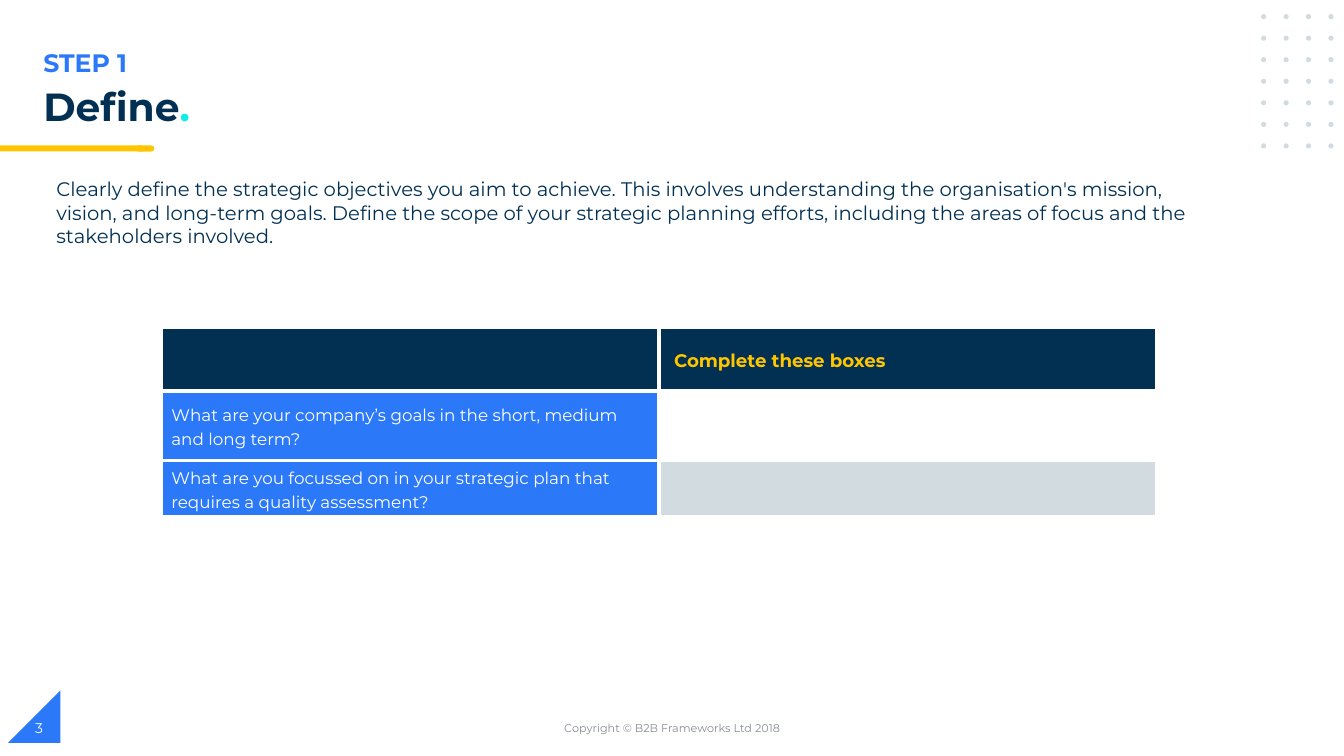
from dataclasses import dataclass
from lxml.etree import fromstring
from pptx import Presentation
from pptx.dml.color import RGBColor
from pptx.enum.shapes import MSO_SHAPE
from pptx.enum.text import MSO_ANCHOR, PP_ALIGN
from pptx.oxml.ns import nsdecls
from pptx.util import Inches, Pt


@dataclass(frozen=True)
class Theme:
    font: str = "Montserrat"
    navy: str = "023053"
    blue: str = "2B79F8"
    yellow: str = "FFC600"
    cyan: str = "0EECEC"
    pale: str = "D1DBE0"
    grey: str = "888C97"
    white: str = "FFFFFF"
    title: int = 28
    step: int = 18
    body: int = 14
    header: int = 13
    question: int = 12
    number: int = 10
    footer: int = 8


theme = Theme()
deck = Presentation()
deck.slide_width, deck.slide_height = Inches(13.33), Inches(7.5)
slide = deck.slides.add_slide(deck.slide_layouts[6])

# The slide is a grid of 100 columns and 100 rows
COLUMN = deck.slide_width / 100
ROW = deck.slide_height / 100


def place(left, top, width, height):
    return (int(left * COLUMN), int(top * ROW),
            int(width * COLUMN), int(height * ROW))


def write(frame, text, *, size, color, bold=False, align=PP_ALIGN.LEFT,
          spacing=1.0, anchor=MSO_ANCHOR.TOP):
    frame.word_wrap = True
    frame.vertical_anchor = anchor
    paragraph = frame.paragraphs[0]
    paragraph.alignment = align
    paragraph.line_spacing = spacing
    run = paragraph.add_run()
    run.text = text
    run.font.name = theme.font
    run.font.size = Pt(size)
    run.font.bold = bold
    run.font.color.rgb = RGBColor.from_string(color)


# Corner triangle, title underline and dot grid
decorations = [
    (MSO_SHAPE.RIGHT_TRIANGLE, (0.6, 91.33, 3.9, 6.93), theme.blue),
    (MSO_SHAPE.FLOWCHART_TERMINATOR, (10.05, 19.25, 1.43, 0.8), theme.yellow),
    (MSO_SHAPE.RECTANGLE, (0, 19.25, 10.58, 0.8), theme.yellow),
]
decorations += [
    (MSO_SHAPE.OVAL, (93.83 + 1.67 * column, 1.87 + 2.85 * row, 0.38, 0.67), theme.pale)
    for row in range(7) for column in range(4)
]
for outline, area, color in decorations:
    decoration = slide.shapes.add_shape(outline, *place(*area))
    decoration.shadow.inherit = False
    decoration.fill.solid()
    decoration.fill.fore_color.rgb = RGBColor.from_string(color)
    decoration.line.fill.background()
    if outline == MSO_SHAPE.RIGHT_TRIANGLE:
        decoration._element.spPr.xfrm.set("flipH", "1")

# Heading, introduction and footer
step = slide.shapes.add_textbox(*place(2.48, 5.6, 50.2, 5.33)).text_frame
write(step, "STEP 1", size=theme.step, color=theme.blue, bold=True)

title = slide.shapes.add_textbox(*place(2.48, 10.93, 58.2, 5.33)).text_frame
for text, color in (("Define", theme.navy), (".", theme.cyan)):
    write(title, text, size=theme.title, color=color, bold=True, spacing=0.9)

introduction = slide.shapes.add_textbox(*place(3.45, 22.8, 85.95, 10.8)).text_frame
write(introduction,
      "Clearly define the strategic objectives you aim to achieve. This involves "
      "understanding the organisation's mission, vision, and long-term goals. Define "
      "the scope of your strategic planning efforts, including the areas of focus and "
      "the stakeholders involved.",
      size=theme.body, color=theme.navy)

copyright_line = slide.shapes.add_textbox(*place(33.15, 93.6, 33.75, 5.33)).text_frame
write(copyright_line, "Copyright © B2B Frameworks Ltd 2018", size=theme.footer,
      color=theme.grey, align=PP_ALIGN.CENTER, anchor=MSO_ANCHOR.MIDDLE)

page_number = slide.shapes.add_textbox(*place(1.88, 93.6, 22.5, 5.33)).text_frame
write(page_number, "3", size=theme.number, color=theme.white, anchor=MSO_ANCHOR.MIDDLE)

# Question table: row height, then text and fill of each cell
rows = [
    (8.4, ("", theme.navy), ("Complete these boxes", theme.navy)),
    (9.2, ("What are your company’s goals in the short, medium and long term?", theme.blue),
     ("", theme.white)),
    (7.47, ("What are you focussed on in your strategic plan that requires a quality assessment?",
            theme.blue), ("", theme.pale)),
]
questions = slide.shapes.add_table(len(rows), 2, *place(12, 43.33, 74.06, 25.07)).table
questions.first_row = questions.horz_banding = False
for row_index, (height, *cells) in enumerate(rows):
    questions.rows[row_index].height = int(height * ROW)
    for column_index, (text, fill) in enumerate(cells):
        cell = questions.cell(row_index, column_index)
        cell.fill.solid()
        cell.fill.fore_color.rgb = RGBColor.from_string(fill)
        for position, side in enumerate(("lnL", "lnR", "lnT", "lnB")):
            cell._tc.get_or_add_tcPr().insert(position, fromstring(
                f'<a:{side} {nsdecls("a")} w="{Pt(3)}"><a:solidFill>'
                f'<a:srgbClr val="{theme.white}"/></a:solidFill></a:{side}>'))
        if text:
            header = row_index == 0
            cell.margin_top = cell.margin_bottom = 0
            cell.margin_left = Inches(0.15 if header else 0.1)
            cell.vertical_anchor = MSO_ANCHOR.MIDDLE
            write(cell.text_frame, text, bold=header, spacing=1.15, anchor=MSO_ANCHOR.MIDDLE,
                  size=theme.header if header else theme.question,
                  color=theme.yellow if header else theme.white)

deck.save("out.pptx")
